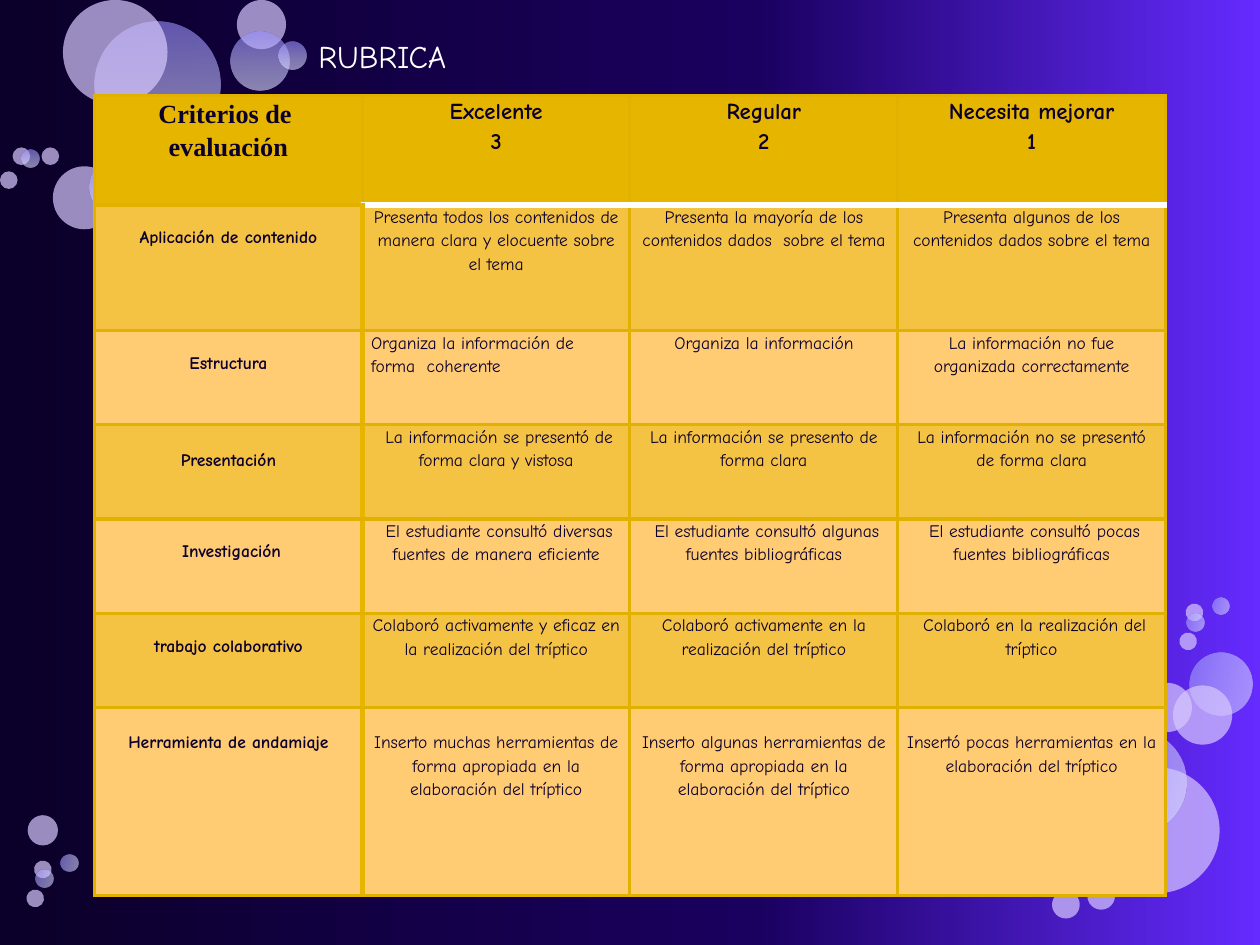
from lxml.etree import SubElement
from pptx import Presentation
from pptx.dml.color import RGBColor
from pptx.enum.shapes import MSO_SHAPE
from pptx.enum.text import MSO_ANCHOR, PP_ALIGN
from pptx.oxml.ns import qn
from pptx.util import Inches, Pt

COLORS = {
    "night": "0B0029", "indigo": "1A005F", "violet": "652BFF",
    "lilac": "D7C8FE", "periwinkle": "9890FF", "lavender": "BFBBFF", "mist": "E0DEFF",
    "header": "E6B500", "band": "F5C344", "plain": "FFCC73",
    "grid": "E1B100", "white": "FFFFFF", "ink": "0C002C",
}
FONT = "Comic Neue"
SKY = [(0, "night", 100), (60, "indigo", 100), (100, "violet", 100)]
GLOW = [(0, "periwinkle", 60), (50, "lavender", 60), (100, "mist", 60)]

TOP_LEFT = [
    (0.75, 0.17, 1, True), (0.42, 1.32, 0.5, False), (0.75, 1, 0.39, True),
    (0.71, 1.25, 0.47, True), (0.5, 0, 0.83, False), (1.88, 0, 0.39, False),
    (1.83, 0.25, 0.47, True), (2.21, 0.33, 0.22, True), (1.12, 1.67, 0.22, False),
    (0.1, 1.17, 0.14, False), (1, 1.92, 0.22, False), (0, 1.36, 0.14, False),
    (0.17, 1.19, 0.14, True), (0.33, 1.17, 0.14, False),
]
RIGHT = [
    (0.68, 1.39, 1, False), (1.44, 0.48, 0.5, True), (1.07, 0.72, 0.39, False),
    (1.31, 0.74, 0.47, False), (0.59, 1.09, 0.83, True), (0.08, 1.61, 0.47, False),
    (0.11, 1.97, 0.22, True), (0.35, 2.37, 0.22, False), (1.41, 0.09, 0.14, False),
    (0.63, 2.3, 0.22, False), (1.62, 0.04, 0.14, True), (1.42, 0.17, 0.14, True),
    (1.36, 0.32, 0.14, False),
]
BOTTOM_LEFT = [
    (0.02, 0.07, 0.24, False), (0.07, 0.43, 0.14, False), (0.28, 0.38, 0.14, True),
    (0.08, 0.5, 0.14, True), (0.01, 0.66, 0.14, False),
]

RUBRIC = [
    ["Criterios de \nevaluación", "Excelente\n3", "Regular\n2", "Necesita mejorar\n1"],
    ["Aplicación de contenido",
     "Presenta todos los contenidos de manera clara y elocuente sobre el tema",
     "Presenta la mayoría de los contenidos dados  sobre el tema",
     "Presenta algunos de los contenidos dados sobre el tema"],
    ["Estructura", "Organiza la información de forma  coherente",
     "Organiza la información", "La información no fue organizada correctamente"],
    ["Presentación", " La información se presentó de forma clara y vistosa",
     "La información se presento de forma clara",
     "La información no se presentó de forma clara"],
    [" Investigación", " El estudiante consultó diversas fuentes de manera eficiente",
     " El estudiante consultó algunas fuentes bibliográficas",
     " El estudiante consultó pocas fuentes bibliográficas"],
    ["trabajo colaborativo",
     "Colaboró activamente y eficaz en la realización del tríptico",
     "Colaboró activamente en la realización del tríptico",
     " Colaboró en la realización del tríptico"],
    ["Herramienta de andamiaje",
     "Inserto muchas herramientas de forma apropiada en la elaboración del tríptico",
     "Inserto algunas herramientas de forma apropiada en la elaboración del tríptico",
     "Insertó pocas herramientas en la elaboración del tríptico"],
]
ROW_SHARES = [0.87, 1, 0.75, 0.75, 0.75, 0.75, 1.5]


def rgb(name):
    return RGBColor.from_string(COLORS[name])


def add_color(parent, name, opacity=100):
    color = SubElement(parent, qn("a:srgbClr"), val=COLORS[name])
    if opacity < 100:
        SubElement(color, qn("a:alpha"), val=str(opacity * 1000))


def set_gradient(fill, owner, stops, angle):
    fill.gradient()
    fill.gradient_angle = angle
    stop_list = next(owner.iter(qn("a:gsLst")))
    for stop in list(stop_list):
        stop_list.remove(stop)
    for position, name, opacity in stops:
        add_color(SubElement(stop_list, qn("a:gs"), pos=str(position * 1000)), name, opacity)


def add_bubbles(slide, left, top, bubbles, rotation=0):
    for x, y, size, glowing in bubbles:
        bubble = slide.shapes.add_shape(
            MSO_SHAPE.OVAL, Inches(left + x), Inches(top + y), Inches(size), Inches(size))
        bubble.shadow.inherit = False
        bubble.line.fill.background()
        bubble.rotation = rotation
        if glowing:
            set_gradient(bubble.fill, bubble._element.spPr, GLOW, 270)
        else:
            bubble.fill.solid()
            bubble.fill.fore_color.rgb = rgb("lilac")
            color = next(bubble._element.spPr.iter(qn("a:srgbClr")))
            SubElement(color, qn("a:alpha"), val="70000")


def set_borders(cell, row, column):
    borders = {side: ("grid", 2) for side in ("L", "R", "T", "B")}
    if column and row == 0:
        borders["B"] = ("white", 3.5)
    if column and row == 1:
        borders["T"] = ("white", 3.5)
    if row and column == 0:
        borders["R"] = ("header", 3.5)
    if row and column == 1:
        borders["L"] = ("header", 3.5)
    properties = cell._tc.get_or_add_tcPr()
    for index, (side, (name, weight)) in enumerate(borders.items()):
        edge = properties.makeelement(qn(f"a:ln{side}"), {"w": str(Pt(weight))})
        add_color(SubElement(edge, qn("a:solidFill")), name)
        properties.insert(index, edge)


def fill_cell(cell, text, row, column):
    is_header, is_criterion = row == 0, column == 0
    cell.margin_left = cell.margin_right = Inches(0.07)
    cell.margin_top = cell.margin_bottom = 0
    if row in (3, 6) and (is_criterion or row == 6):
        cell.margin_top = Inches(0.18)
    elif is_criterion and not is_header:
        cell.margin_top = Inches(0.16)
    cell.fill.solid()
    cell.fill.fore_color.rgb = rgb("header" if is_header else "band" if row % 2 else "plain")
    cell.text = text
    for paragraph in cell.text_frame.paragraphs:
        paragraph.alignment = PP_ALIGN.LEFT if (row, column) == (2, 1) else PP_ALIGN.CENTER
        paragraph.line_spacing = 1.15
        font = paragraph.font
        font.name = "Times New Roman" if is_header and is_criterion else FONT
        font.size = Pt(10 if not is_header else 15 if is_criterion else 13)
        font.bold = is_header or is_criterion
        font.color.rgb = rgb("ink")
    set_borders(cell, row, column)


def add_rubric(slide, left, top, width, height):
    table = slide.shapes.add_table(
        len(RUBRIC), len(RUBRIC[0]), left, top, width, height).table
    table.first_row = table.horz_banding = False
    for column in table.columns:
        column.width = width // len(RUBRIC[0])
    for row, share in zip(table.rows, ROW_SHARES):
        row.height = int(height * share / sum(ROW_SHARES))
    for row, texts in enumerate(RUBRIC):
        for column, text in enumerate(texts):
            fill_cell(table.cell(row, column), text, row, column)


def add_title(slide, left, top, width, height):
    title = slide.shapes.title
    title.left, title.top, title.width, title.height = left, top, width, height
    title.text_frame.text = "RUBRICA"
    title.text_frame.vertical_anchor = MSO_ANCHOR.MIDDLE
    heading = title.text_frame.paragraphs[0]
    heading.alignment = PP_ALIGN.CENTER
    heading.font.name = FONT
    heading.font.size = Pt(18)
    heading.font.color.rgb = rgb("white")


def main():
    deck = Presentation()
    deck.slide_width, deck.slide_height = Inches(10), Inches(7.5)
    slide = deck.slides.add_slide(deck.slide_layouts[5])
    set_gradient(slide.background.fill, slide._element, SKY, 0)
    add_bubbles(slide, 0, 0, TOP_LEFT)
    add_bubbles(slide, 8, 4.7, RIGHT, 283.3)
    add_bubbles(slide, 0.2, 6.4, BOTTOM_LEFT, 283.3)
    add_rubric(slide, Inches(0.75), Inches(0.76), Inches(8.5), Inches(6.35))
    add_title(slide, Inches(0.75), Inches(0.24), Inches(4.57), Inches(0.4))
    deck.save("out.pptx")


if __name__ == "__main__":
    main()
